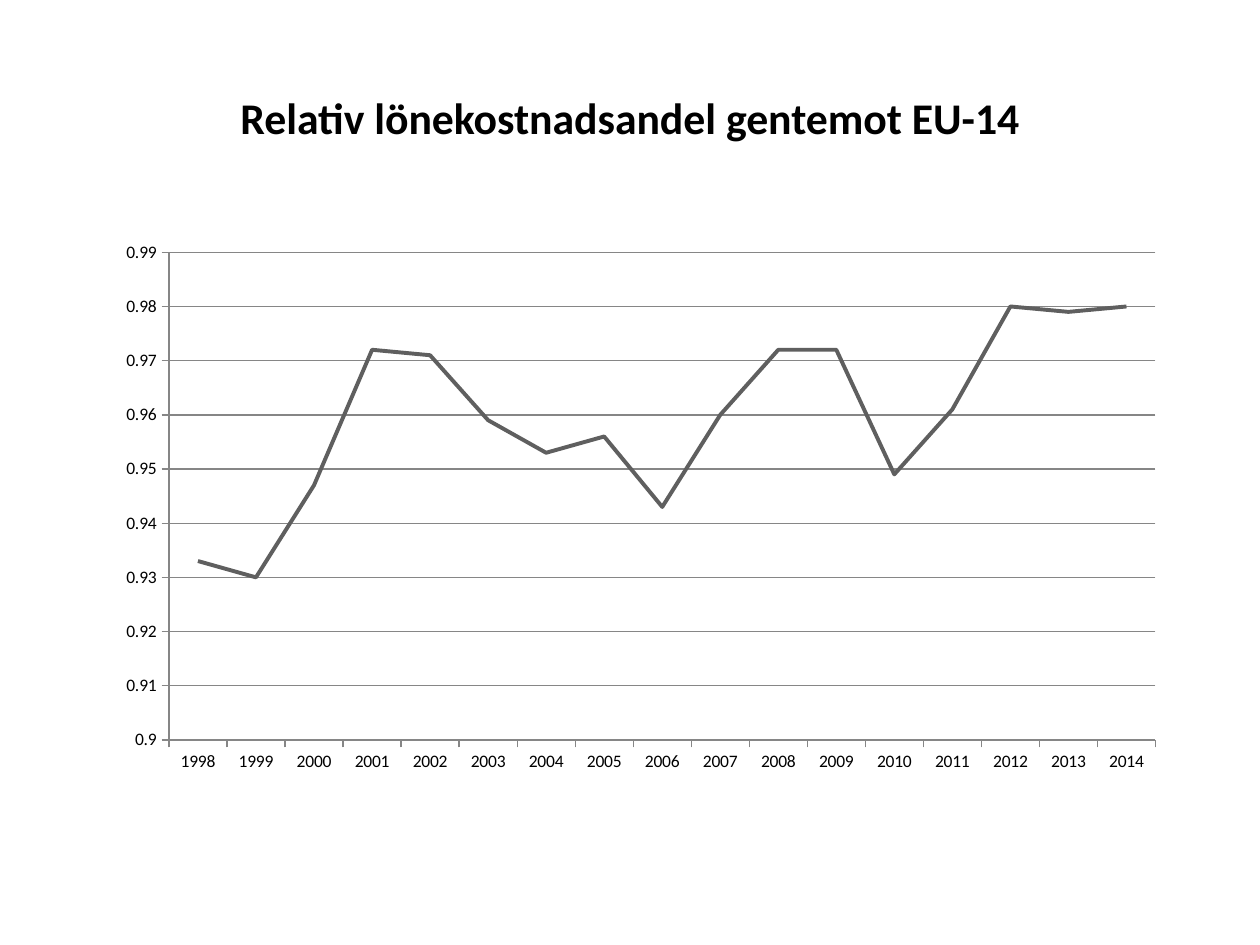
from lxml import etree
from pptx import Presentation
from pptx import util as u
from pptx.chart.data import CategoryChartData
from pptx.dml.color import RGBColor
from pptx.enum import chart as ch, text
from pptx.oxml import parse_xml
from pptx.oxml.ns import nsdecls, qn

PX_PER_INCH = 126
FONT = "Calibri"
BLACK = RGBColor(0x00, 0x00, 0x00)
WHITE = RGBColor(0xFF, 0xFF, 0xFF)
AXIS_GRAY = RGBColor(0x86, 0x86, 0x86)
LINE_GRAY = RGBColor(0x5F, 0x5F, 0x5F)

FIRST_YEAR = 1998
SHARES = [0.933, 0.93, 0.947, 0.972, 0.971, 0.959, 0.953, 0.956, 0.943,
          0.96, 0.972, 0.972, 0.949, 0.961, 0.98, 0.979, 0.98]


def px(n):
    return u.Emu(round(n * 914400 / PX_PER_INCH))


def style_font(font, size, bold=False):
    font.name, font.size, font.bold = FONT, u.Pt(size), bold
    font.color.rgb = BLACK


def style_line(line, color, width):
    line.color.rgb = color
    line.width = u.Pt(width)


def add_title(slide, words, left, top, width, height):
    tf = slide.shapes.add_textbox(px(left), px(top), px(width), px(height)).text_frame
    tf.word_wrap = True
    tf.vertical_anchor = text.MSO_ANCHOR.MIDDLE
    p = tf.paragraphs[0]
    p.text = words
    p.alignment = text.PP_ALIGN.CENTER
    style_font(p.font, 25, bold=True)


def set_plot_area(chart, x, y, w, h):
    """Fix the inner plot area as fractions of the chart."""
    plot_area = chart.plots[0]._element.getparent()
    for old in plot_area.findall(qn("c:layout")):
        plot_area.remove(old)
    layout = parse_xml(f"<c:layout {nsdecls('c')}><c:manualLayout/></c:layout>")
    settings = [("layoutTarget", "inner"), ("xMode", "edge"), ("yMode", "edge"),
                ("x", x), ("y", y), ("w", w), ("h", h)]
    for tag, val in settings:
        etree.SubElement(layout[0], qn(f"c:{tag}")).set("val", str(val))
    plot_area.insert(0, layout)


def set_border(chart, color, width):
    """Outline the whole chart."""
    sp_pr = parse_xml(
        f"<c:spPr {nsdecls('c', 'a')}><a:noFill/><a:ln w=\"{u.Pt(width)}\"><a:solidFill>"
        f"<a:srgbClr val=\"{color}\"/></a:solidFill></a:ln></c:spPr>")
    chart._chartSpace.find(qn("c:chart")).addnext(sp_pr)


def add_line_chart(slide, left, top, width, height):
    data = CategoryChartData(number_format="General")
    data.categories = [str(FIRST_YEAR + i) for i in range(len(SHARES))]
    data.add_series("Series 1", SHARES)
    chart = slide.shapes.add_chart(ch.XL_CHART_TYPE.LINE, px(left), px(top),
                                   px(width), px(height), data).chart
    chart.has_legend = False
    chart.has_title = False
    style_font(chart.font, 10)
    set_plot_area(chart, 0.093, 0.051, 0.871, 0.783)
    set_border(chart, WHITE, 0.75)

    # Axes and gridlines
    for axis in (chart.category_axis, chart.value_axis):
        axis.major_tick_mark = ch.XL_TICK_MARK.OUTSIDE
        axis.minor_tick_mark = ch.XL_TICK_MARK.NONE
        style_line(axis.format.line, AXIS_GRAY, 0.75)
    chart.category_axis.has_major_gridlines = False
    val = chart.value_axis
    val.minimum_scale, val.maximum_scale, val.major_unit = 0.9, 0.99, 0.01
    val.tick_labels.number_format = "General"
    val.tick_labels.number_format_is_linked = False
    val.has_major_gridlines = True
    style_line(val.major_gridlines.format.line, AXIS_GRAY, 0.75)

    # Series
    plot = chart.plots[0]
    plot.vary_by_categories = False
    s = plot.series[0]
    s.smooth = False
    s.marker.style = ch.XL_MARKER_STYLE.NONE
    style_line(s.format.line, LINE_GRAY, 2.25)


def main():
    prs = Presentation()
    prs.slide_width, prs.slide_height = px(1260), px(945)
    slide = prs.slides.add_slide(prs.slide_layouts[6])
    add_title(slide, "Relativ lönekostnadsandel gentemot EU-14", 63, 38, 1134, 157)
    add_line_chart(slide, 63, 220, 1134, 624)
    prs.save("out.pptx")


if __name__ == "__main__":
    main()
